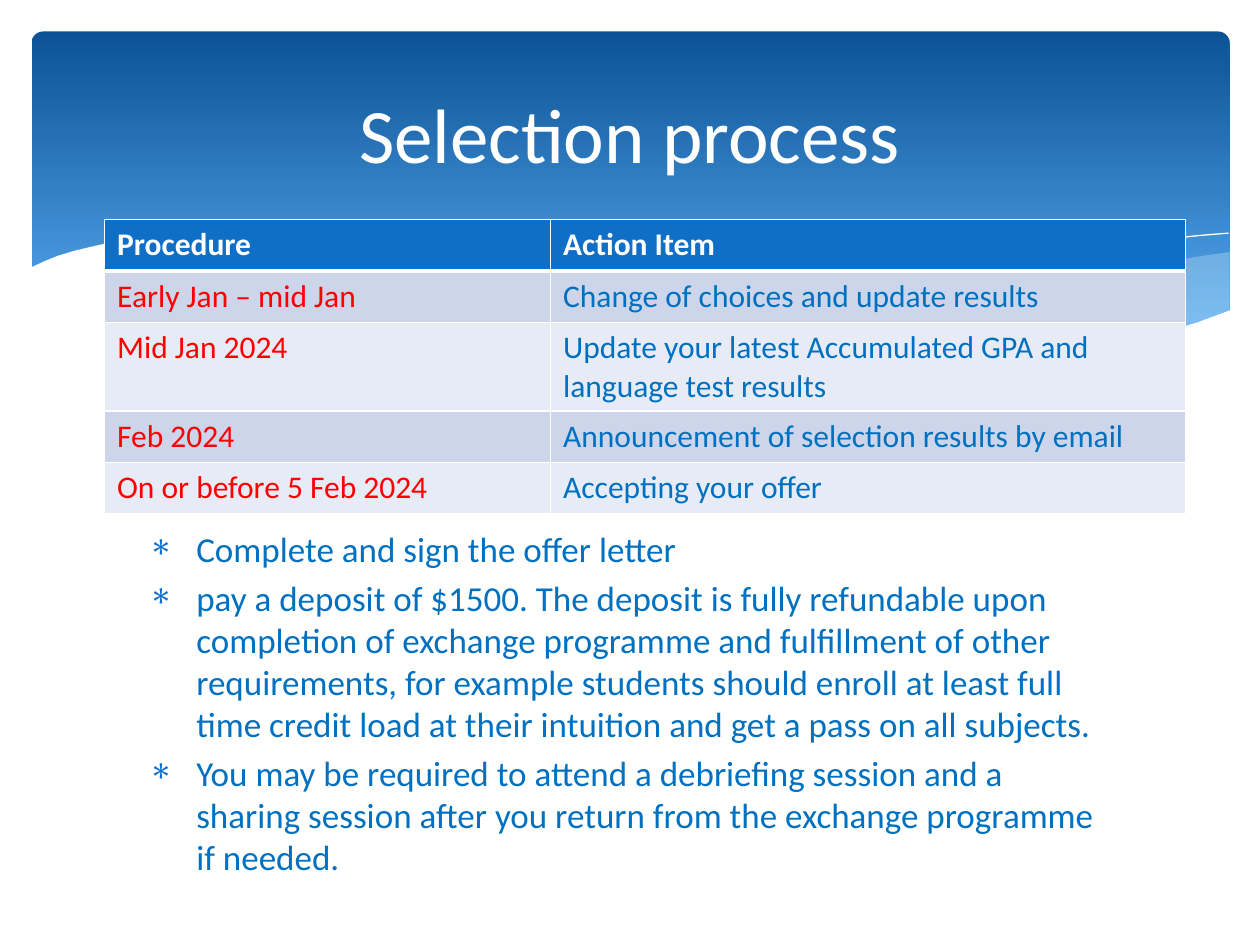
from dataclasses import dataclass

import pptx
import pptx.dml.color
import pptx.enum.shapes
import pptx.enum.text
import pptx.oxml.ns
import pptx.util
from lxml import etree
from pptx.util import Inches


@dataclass(frozen=True)
class Theme:
    font: str = "Calibri"
    title_size: int = 44
    bullet_size: int = 20
    table_size: int = 18
    white: str = "FFFFFF"
    accent: str = "0F6FC6"
    text: str = "0070C0"
    date: str = "FF0000"
    mist: str = "DBF5F9"
    banner: tuple = ("0B5394", "59AAF2")
    bands: tuple = ("CCD5EA", "E7EBF5")


THEME = Theme()

RIGHT_WAVE = [(9.76, 2), (9.48, 2.04), (9.06, 2.13), (8.61, 2.23), (8.05, 2.37),
              (7.53, 2.48), (7.06, 2.57), (6.61, 2.65), (6.91, 2.69), (7.32, 2.74),
              (7.69, 2.77), (8.14, 2.78), (8.54, 2.76), (8.89, 2.72), (9.21, 2.65),
              (9.49, 2.57), (9.76, 2.47)]
MIDDLE_WAVE = [(8.93, 2.73), (8.37, 2.65), (7.75, 2.54), (7.06, 2.4), (6.29, 2.22),
               (5.84, 2.11), (5.41, 2.03), (5.02, 1.96), (4.65, 1.91), (4.2, 1.87),
               (3.8, 1.85), (3.44, 1.86), (3.13, 1.88), (2.86, 1.91), (3.23, 1.96),
               (3.62, 2.03), (4.04, 2.11), (4.49, 2.22), (5.3, 2.4), (6.01, 2.55),
               (6.5, 2.64), (6.95, 2.7), (7.36, 2.75), (7.73, 2.77), (8.18, 2.78),
               (8.57, 2.77)]
LONG_CURVE = [(3.09, 1.95), (3.28, 1.92), (3.53, 1.89), (3.87, 1.87), (4.33, 1.87),
              (4.89, 1.9), (5.33, 1.94), (5.82, 2), (6.36, 2.08), (6.95, 2.19),
              (7.6, 2.33), (8.31, 2.51), (9.07, 2.72)]
SHORT_CURVE = [(6.13, 2.57), (6.53, 2.46), (6.95, 2.35), (7.48, 2.23), (8.06, 2.1),
               (8.66, 1.99), (8.95, 1.94), (9.24, 1.9), (9.51, 1.87), (9.75, 1.85)]
WHITE_FRONT = [(9.77, 2.46), (9.5, 2.56), (9.2, 2.65), (8.87, 2.71), (8.5, 2.75),
               (8.09, 2.77), (7.61, 2.75), (7.08, 2.7), (6.48, 2.62), (5.79, 2.5),
               (5.03, 2.33), (4.47, 2.2), (3.91, 2.07), (3.4, 1.97), (2.92, 1.9),
               (2.5, 1.86), (2.11, 1.84), (1.77, 1.84), (1.46, 1.85), (1.19, 1.87),
               (0.95, 1.91), (0.76, 1.95), (0.59, 1.99), (0.46, 2.03), (0.36, 2.07),
               (0.23, 2.13), (0.23, 3.29), (9.77, 3.29)]

SCHEDULE = [
    ("Procedure", "Action Item"),
    ("Early Jan – mid Jan", "Change of choices and update results"),
    ("Mid Jan 2024", "Update your latest Accumulated GPA and language test results"),
    ("Feb 2024", "Announcement of selection results by email"),
    ("On or before 5 Feb 2024", "Accepting your offer"),
]
OFFER_STEPS = [
    "Complete and sign the offer letter",
    "pay a deposit of $1500. The deposit is fully refundable upon completion of "
    "exchange programme and fulfillment of other requirements, for example students "
    "should enroll at least full time credit load at their intuition and get a pass "
    "on all subjects.",
    "You may be required to attend a debriefing session and a sharing session after "
    "you return from the exchange programme if needed.",
]


def rgb(color):
    return pptx.dml.color.RGBColor.from_string(color)


def add_node(parent, tag, **attributes):
    return etree.SubElement(parent, pptx.oxml.ns.qn(tag), attributes)


def apply_format(target, values):
    for name, value in values.items():
        setattr(target, name, value)


def write(paragraph, text, size, color, bold=False):
    run = paragraph.add_run()
    run.text = text
    apply_format(run.font, {"name": THEME.font, "size": pptx.util.Pt(size), "bold": bold})
    run.font.color.rgb = rgb(color)


def add_banner(slide):
    banner = slide.shapes.add_shape(
        pptx.enum.shapes.MSO_SHAPE.ROUNDED_RECTANGLE,
        Inches(0.25), Inches(0.25), Inches(9.51), Inches(2.7))
    banner.adjustments[0] = 0.034
    banner.shadow.inherit = False
    banner.line.fill.background()
    banner.fill.gradient()
    banner.fill.gradient_angle = 270
    for stop, position, color in zip(banner.fill.gradient_stops, (0, 0.9), THEME.banner):
        stop.position = position
        stop.color.rgb = rgb(color)


def draw_outline(slide, points, closed):
    corners = [(Inches(x), Inches(y)) for x, y in points]
    builder = slide.shapes.build_freeform(*corners[0])
    builder.add_line_segments(corners[1:], close=closed)
    outline = builder.convert_to_shape()
    outline.shadow.inherit = False
    return outline


def add_wave(slide, points, color, opacity=100):
    wave = draw_outline(slide, points, closed=True)
    wave.line.fill.background()
    wave.fill.solid()
    wave.fill.fore_color.rgb = rgb(color)
    if opacity < 100:
        tint = wave.fill._xPr.find(".//" + pptx.oxml.ns.qn("a:srgbClr"))
        add_node(tint, "a:alpha", val=str(opacity * 1000))


def add_curve(slide, points):
    curve = draw_outline(slide, points, closed=False)
    curve.fill.background()
    curve.line.color.rgb = rgb(THEME.white)
    curve.line.width = pptx.util.Pt(0)


def place_title(slide, text):
    title = slide.shapes.title
    apply_format(title, {"left": Inches(0.5), "top": Inches(0.37),
                         "width": Inches(9), "height": Inches(1.37)})
    title.text_frame.vertical_anchor = pptx.enum.text.MSO_ANCHOR.MIDDLE
    heading = title.text_frame.paragraphs[0]
    heading.alignment = pptx.enum.text.PP_ALIGN.CENTER
    write(heading, text, THEME.title_size, THEME.white)
    # Appending again lifts the title above the banner.
    slide.shapes._spTree.append(title._element)


def add_bullets(slide, items):
    box = slide.shapes.add_textbox(Inches(0.75), Inches(4.14), Inches(8.1), Inches(2.2))
    box.text_frame.word_wrap = True
    for index, item in enumerate(items):
        step = box.text_frame.paragraphs[0] if index == 0 else box.text_frame.add_paragraph()
        step.space_before = pptx.util.Pt(THEME.bullet_size * 0.2)
        layout = step._p.get_or_add_pPr()
        layout.set("marL", str(Inches(0.71)))
        layout.set("indent", str(Inches(-0.38)))
        add_node(add_node(layout, "a:buClr"), "a:srgbClr", val=THEME.accent)
        add_node(layout, "a:buChar", char="∗")
        write(step, item, THEME.bullet_size, THEME.text)


def style_cell(cell, fill, bottom_width):
    borders = cell._tc.get_or_add_tcPr()
    for side, width in (("L", 1), ("R", 1), ("T", 1), ("B", bottom_width)):
        edge = add_node(borders, f"a:ln{side}", w=str(pptx.util.Pt(width)))
        add_node(add_node(edge, "a:solidFill"), "a:srgbClr", val=THEME.white)
    cell.fill.solid()
    cell.fill.fore_color.rgb = rgb(fill)


def add_schedule(slide, rows):
    widths = (3.54, 5.04)
    row_height = 0.41
    schedule = slide.shapes.add_table(
        len(rows), len(widths), Inches(0.83), Inches(1.74),
        Inches(sum(widths)), Inches(row_height * len(rows))).table
    for column, width in zip(schedule.columns, widths):
        column.width = Inches(width)
    for row_index, row in enumerate(rows):
        header = row_index == 0
        fill = THEME.accent if header else THEME.bands[(row_index - 1) % 2]
        colors = (THEME.white, THEME.white) if header else (THEME.date, THEME.text)
        for column_index, (text, color) in enumerate(zip(row, colors)):
            cell = schedule.cell(row_index, column_index)
            style_cell(cell, fill, bottom_width=3 if header else 1)
            write(cell.text_frame.paragraphs[0], text, THEME.table_size, color, header)


def main():
    deck = pptx.Presentation()
    apply_format(deck, {"slide_width": Inches(10), "slide_height": Inches(7.5)})
    slide = deck.slides.add_slide(deck.slide_layouts[5])
    add_banner(slide)
    add_wave(slide, RIGHT_WAVE, THEME.mist, opacity=29)
    add_wave(slide, MIDDLE_WAVE, THEME.mist, opacity=40)
    add_curve(slide, LONG_CURVE)
    add_curve(slide, SHORT_CURVE)
    add_wave(slide, WHITE_FRONT, THEME.white)
    place_title(slide, "Selection process")
    add_bullets(slide, OFFER_STEPS)
    add_schedule(slide, SCHEDULE)
    deck.save("out.pptx")


if __name__ == "__main__":
    main()
